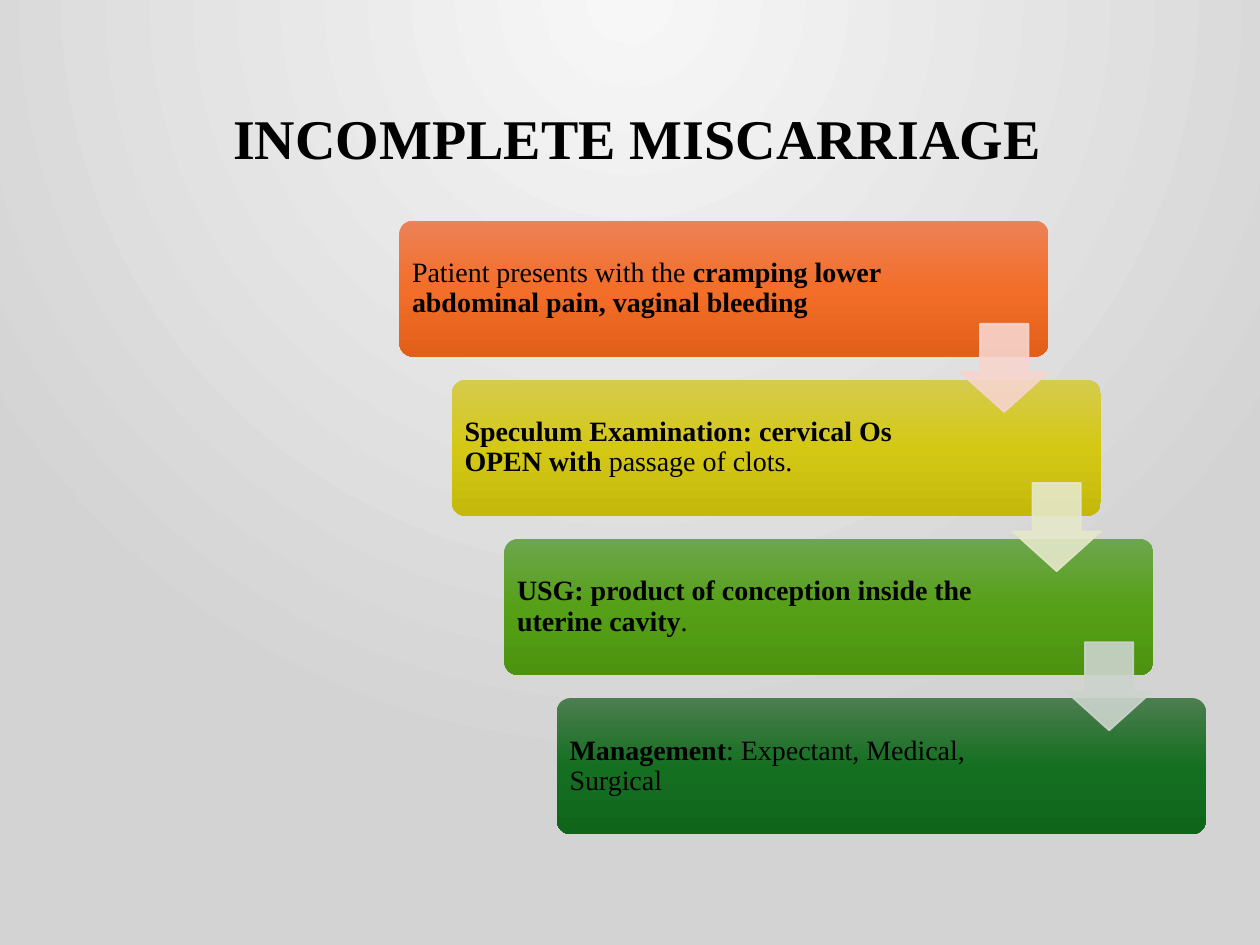
from lxml.etree import SubElement
from pptx import Presentation
from pptx.dml.color import RGBColor
from pptx.enum.shapes import MSO_SHAPE
from pptx.enum.text import MSO_ANCHOR, PP_ALIGN
from pptx.oxml.ns import qn
from pptx.util import Inches, Pt

FONT = "Times New Roman"
BLACK = "000000"

# Each step: gradient top to bottom, arrow colour to the next step, runs (text, bold)
STEPS = [
    (("ED8257", "F26E29", "E25F1A"), "F7D5CE",
     [("Patient presents with the ", False),
      ("cramping lower abdominal pain, vaginal bleeding", True)]),
    (("D5CB4E", "D4C815", "C4B90B"), "E5E8CA",
     [("Speculum Examination: cervical Os OPEN with ", True),
      ("passage of clots.", False)]),
    (("6DA64E", "56A017", "4C930F"), "CCD4CD",
     [("USG: product of conception inside the uterine cavity", True),
      (".", False)]),
    (("4D7E50", "156F21", "0F661B"), None,
     [("Management", True), (": Expectant, Medical, Surgical", False)]),
]


def rgb(value):
    return RGBColor.from_string(value)


def inches(*box):
    return [Inches(length) for length in box]


def set_gradient(fill, colours):
    """Spread the colours evenly over a gradient and return its XML element."""
    fill.gradient()
    stops = fill.gradient_stops[0]._gs.getparent()
    for stop in list(stops):
        stops.remove(stop)
    for i, colour in enumerate(colours):
        position = round(100000 * i / (len(colours) - 1))
        stop = SubElement(stops, qn("a:gs"), pos=str(position))
        SubElement(stop, qn("a:srgbClr"), val=colour)
    return stops.getparent()


def set_opacity(colour_format, percent):
    for colour in colour_format._xFill.iter(qn("a:srgbClr")):
        SubElement(colour, qn("a:alpha"), val=str(percent * 1000))


def add_runs(paragraph, runs, size):
    paragraph.line_spacing = 0.9
    paragraph.alignment = PP_ALIGN.LEFT
    for text, bold in runs:
        run = paragraph.add_run()
        run.text = text
        run.font.name = FONT
        run.font.size = Pt(size)
        run.font.bold = bold
        run.font.color.rgb = rgb(BLACK)


def paint_background(slide):
    gradient = set_gradient(slide.background.fill, ("F7F7F7", "D3D3D3"))
    for linear in gradient.findall(qn("a:lin")):
        gradient.remove(linear)
    glow = SubElement(gradient, qn("a:path"), path="circle")
    SubElement(glow, qn("a:fillToRect"), l="43000", t="0", r="43000", b="100000")


def place_title(slide, box, text):
    title = slide.shapes.title
    title.left, title.top, title.width, title.height = inches(*box)
    title.text_frame.vertical_anchor = MSO_ANCHOR.TOP
    add_runs(title.text_frame.paragraphs[0], [(text, True)], 32)


def add_step(slide, box, colours, runs):
    left, top, width, height = box
    card = slide.shapes.add_shape(MSO_SHAPE.ROUNDED_RECTANGLE, *inches(*box))
    card.adjustments[0] = 0.1
    card.shadow.inherit = False
    card.line.fill.background()
    set_gradient(card.fill, colours)
    card.fill.gradient_angle = 270

    # The label stops short of the arrows
    pad = 0.03
    label = slide.shapes.add_textbox(
        *inches(left + pad, top + pad, 3.95, height - 2 * pad))
    frame = label.text_frame
    frame.word_wrap = True
    frame.vertical_anchor = MSO_ANCHOR.MIDDLE
    frame.margin_left = frame.margin_right = Inches(0.07)
    frame.margin_top = frame.margin_bottom = Inches(0.07)
    add_runs(frame.paragraphs[0], runs, 16)


def add_arrow(slide, box, colour):
    arrow = slide.shapes.add_shape(MSO_SHAPE.DOWN_ARROW, *inches(*box))
    arrow.adjustments[0], arrow.adjustments[1] = 0.45, 0.55
    arrow.adjustments[0], arrow.adjustments[1] = 0.55, 0.45
    arrow.shadow.inherit = False
    arrow.line.width = Pt(1)
    for fill in (arrow.fill, arrow.line.fill):
        fill.solid()
        fill.fore_color.rgb = rgb(colour)
        set_opacity(fill.fore_color, 90)


def place_staircase(slide, box):
    """Descending cards; each arrow bridges a card and the next one."""
    left, top, width, height = box
    card_width, card_height, arrow_size = 5.15, 1.08, 0.7
    count = len(STEPS)
    shift_x = (width - card_width) / (count - 1)
    shift_y = (height - card_height) / (count - 1)
    corners = [(left + i * shift_x, top + i * shift_y) for i in range(count)]

    for (x, y), (colours, _, runs) in zip(corners, STEPS):
        add_step(slide, (x, y, card_width, card_height), colours, runs)
    for (x, y), (_, colour, _) in zip(corners[:-1], STEPS):
        add_arrow(slide, (x + card_width - arrow_size, y + 0.82,
                          arrow_size, arrow_size), colour)


def main():
    deck = Presentation()
    deck.slide_width, deck.slide_height = inches(10, 7.5)
    slide = deck.slides.add_slide(deck.slide_layouts[5])
    paint_background(slide)
    place_title(slide, (1.75, 0.83, 7.42, 0.79), "INCOMPLETE MISCARRIAGE")
    place_staircase(slide, (3.17, 1.75, 6.4, 4.87))
    deck.save("out.pptx")


if __name__ == "__main__":
    main()
